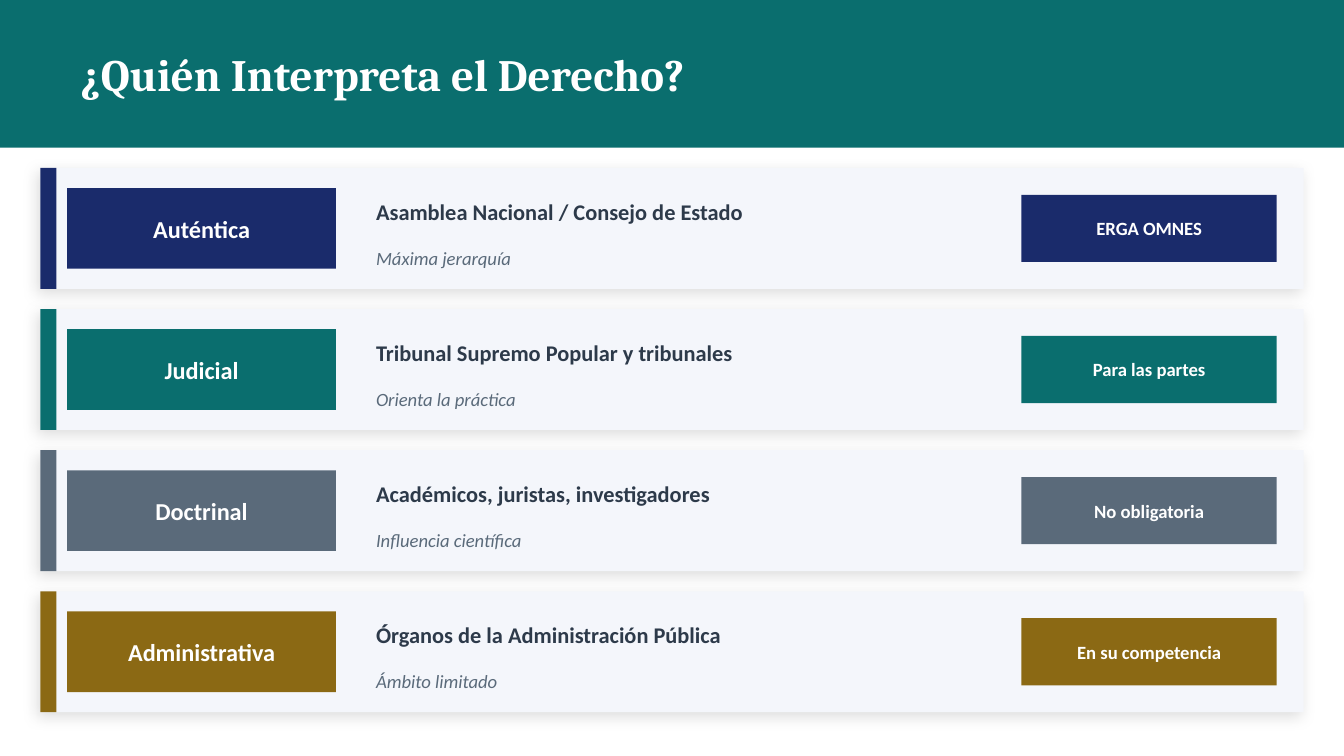
from dataclasses import dataclass

from pptx import Presentation
from pptx.dml.color import RGBColor
from pptx.enum.shapes import MSO_SHAPE
from pptx.enum.text import MSO_ANCHOR, MSO_AUTO_SIZE, PP_ALIGN
from pptx.oxml import parse_xml
from pptx.oxml.ns import nsdecls
from pptx.util import Inches, Pt

RECTANGLE = MSO_SHAPE.RECTANGLE
MIDDLE = MSO_ANCHOR.MIDDLE
LEFT, CENTER = PP_ALIGN.LEFT, PP_ALIGN.CENTER
NO_AUTO_SIZE = MSO_AUTO_SIZE.NONE
TITLE_ONLY = 5


@dataclass(frozen=True)
class Theme:
    title_font: str = "Cambria"
    body_font: str = "Calibri"
    title_size: int = 24
    label_size: int = 13
    heading_size: int = 12
    detail_size: int = 10
    white: str = "FFFFFF"
    card: str = "F4F6FB"
    shadow: str = "000000"
    dark: str = "2D3A4A"
    navy: str = "1A2B6B"
    teal: str = "0A6E6E"
    slate: str = "5A6A7A"
    gold: str = "8B6914"


THEME = Theme()

INTERPRETATIONS = [
    ("Auténtica", "Asamblea Nacional / Consejo de Estado", "Máxima jerarquía",
     "ERGA OMNES", THEME.navy),
    ("Judicial", "Tribunal Supremo Popular y tribunales", "Orienta la práctica",
     "Para las partes", THEME.teal),
    ("Doctrinal", "Académicos, juristas, investigadores", "Influencia científica",
     "No obligatoria", THEME.slate),
    ("Administrativa", "Órganos de la Administración Pública", "Ámbito limitado",
     "En su competencia", THEME.gold),
]


def add_rectangle(slide, left, top, width, height, color):
    shape = slide.shapes.add_shape(
        RECTANGLE, Inches(left), Inches(top), Inches(width), Inches(height))
    shape.shadow.inherit = False
    shape.fill.solid()
    shape.fill.fore_color.rgb = RGBColor.from_string(color)
    shape.line.fill.background()
    return shape


def add_soft_shadow(shape):
    """Cast a faint shadow down and to the left."""
    effects = shape._element.spPr.find("{*}effectLst")
    effects.append(parse_xml(
        f'<a:outerShdw {nsdecls("a")} blurRad="{Pt(8)}" dist="{Pt(3)}" '
        f'dir="{135 * 60000}" algn="bl" rotWithShape="0">'
        f'<a:srgbClr val="{THEME.shadow}"><a:alpha val="13000"/></a:srgbClr>'
        '</a:outerShdw>'))


def write_text(shape, text, size, color, font=THEME.body_font,
               alignment=LEFT, bold=False, italic=False):
    frame = shape.text_frame
    frame.word_wrap = True
    frame.auto_size = NO_AUTO_SIZE
    frame.vertical_anchor = MIDDLE
    frame.text = text
    paragraph = frame.paragraphs[0]
    paragraph.alignment = alignment
    paragraph.font.name = font
    paragraph.font.size = Pt(size)
    paragraph.font.bold = bold
    paragraph.font.italic = italic
    paragraph.font.color.rgb = RGBColor.from_string(color)


def add_text(slide, left, top, width, height, text, size, color, **style):
    box = slide.shapes.add_textbox(
        Inches(left), Inches(top), Inches(width), Inches(height))
    write_text(box, text, size, color, **style)


def add_badge(slide, left, top, width, height, text, size, color):
    """Add a filled block with a centred white caption."""
    badge = add_rectangle(slide, left, top, width, height, color)
    frame = badge.text_frame
    frame.margin_left = frame.margin_right = 0
    frame.margin_top = frame.margin_bottom = 0
    write_text(badge, text, size, THEME.white, alignment=CENTER, bold=True)


def add_header(slide, left, top, width, height, text):
    band = add_rectangle(slide, left, top, width, height, THEME.teal)
    title = slide.shapes.title
    title._element.addprevious(band._element)  # keep the band behind the title
    title.left, title.top = Inches(left + 0.5), Inches(top + 0.2)
    title.width, title.height = Inches(width - 1), Inches(height - 0.4)
    write_text(title, text, THEME.title_size, THEME.white,
               font=THEME.title_font, bold=True)


def add_interpretation_card(slide, left, top, width, height, interpretation):
    label, interpreter, detail, effect, color = interpretation
    card = add_rectangle(slide, left, top, width, height, THEME.card)
    add_soft_shadow(card)
    add_rectangle(slide, left, top, 0.12, height, color)
    add_badge(slide, left + 0.2, top + 0.15, 2, height - 0.3,
              label, THEME.label_size, color)
    add_text(slide, left + 2.4, top + 0.1, 4.8, 0.45, interpreter,
             THEME.heading_size, THEME.dark, bold=True)
    add_text(slide, left + 2.4, top + 0.52, 4.8, 0.3, detail,
             THEME.detail_size, THEME.slate, italic=True)
    add_badge(slide, left + width - 2.1, top + 0.2, 1.9, height - 0.4,
              effect, THEME.detail_size, color)


def main():
    presentation = Presentation()
    presentation.slide_width = Inches(10)
    presentation.slide_height = Inches(10 * 9 / 16)
    slide = presentation.slides.add_slide(presentation.slide_layouts[TITLE_ONLY])
    add_header(slide, 0, 0, 10, 1.1, "¿Quién Interpreta el Derecho?")
    card_height, gap = 0.9, 0.15
    for index, interpretation in enumerate(INTERPRETATIONS):
        top = 1.25 + index * (card_height + gap)
        add_interpretation_card(slide, 0.3, top, 9.4, card_height, interpretation)
    presentation.save("out.pptx")


if __name__ == "__main__":
    main()
